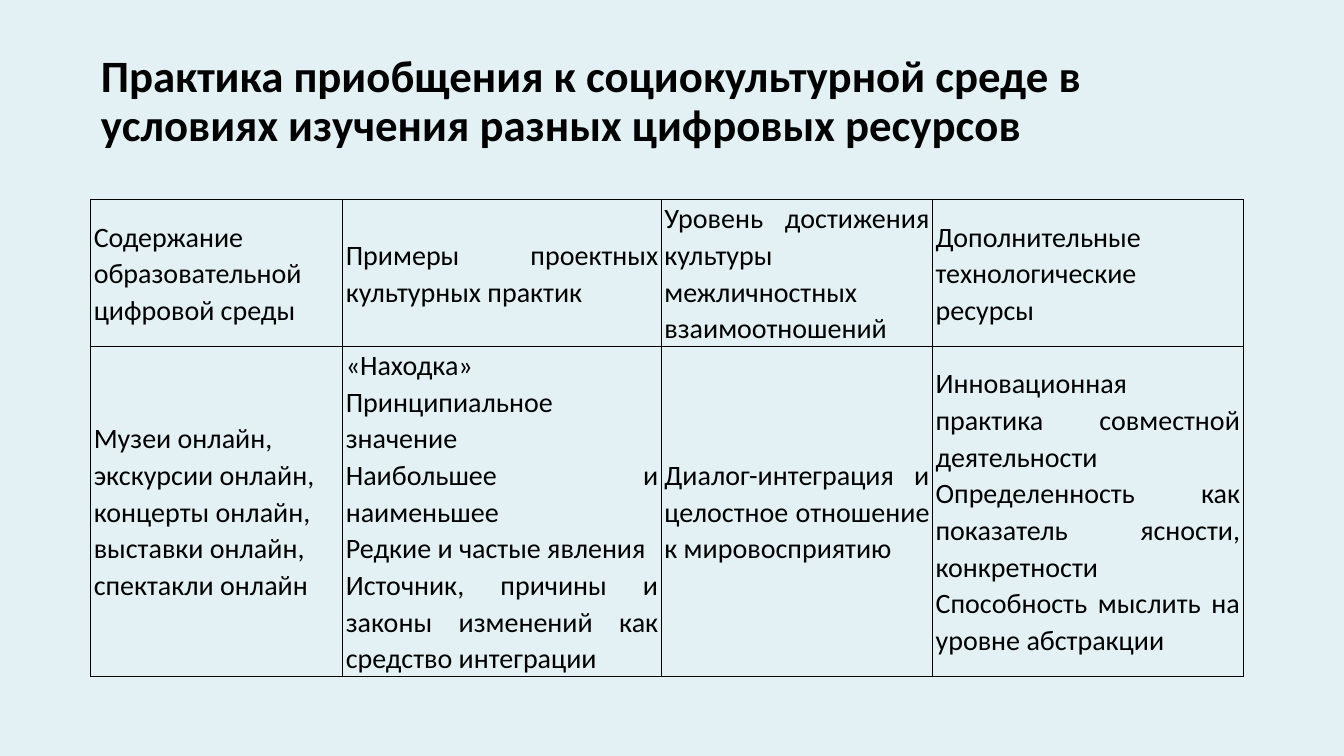
import pptx
import pptx.util
import pptx.dml.color
import pptx.enum.text
import pptx.oxml
import pptx.oxml.ns

Inches = pptx.util.Inches
ALIGN = pptx.enum.text.PP_ALIGN
MIDDLE = pptx.enum.text.MSO_ANCHOR.MIDDLE
BLACK = pptx.dml.color.RGBColor(0x00, 0x00, 0x00)
PALE = pptx.dml.color.RGBColor(0xE4, 0xF1, 0xF4)

WIDE, HIGH = 13.33, 7.5
LEFT = 0.9
COLS = [2.5, 3.16, 2.69, 3.08]
ROWS = [1.45, 3.27]

TITLE = "Практика приобщения к социокультурной среде в условиях изучения разных цифровых ресурсов"
CELLS = [
    [
        ["Содержание образовательной цифровой среды"],
        ["Примеры проектных культурных практик"],
        ["Уровень достижения культуры межличностных взаимоотношений"],
        ["Дополнительные технологические ресурсы"],
    ],
    [
        ["Музеи онлайн,", "экскурсии онлайн,", "концерты онлайн,",
         "выставки онлайн,", "спектакли онлайн"],
        ["«Находка»", "Принципиальное значение", "Наибольшее и наименьшее",
         "Редкие и частые явления",
         "Источник, причины и законы изменений как средство интеграции"],
        ["Диалог-интеграция и целостное отношение к мировосприятию"],
        ["Инновационная практика совместной деятельности",
         "Определенность как показатель ясности, конкретности",
         "Способность мыслить на уровне абстракции"],
    ],
]


def write(frame, lines, size=20, bold=False, align=ALIGN.JUSTIFY, lead=1.07):
    frame.word_wrap = True
    for index, line in enumerate(lines):
        para = frame.paragraphs[0] if index == 0 else frame.add_paragraph()
        para.alignment = align
        para.line_spacing = lead
        run = para.add_run()
        run.text = line
        run.font.name = "Calibri"
        run.font.size = pptx.util.Pt(size)
        run.font.bold = bold
        run.font.color.rgb = BLACK


def frame_cell(cell):
    cell.fill.background()
    props = cell._tc.get_or_add_tcPr()
    for index, side in enumerate("LRTB"):
        line = pptx.oxml.parse_xml(
            f'<a:ln{side} {pptx.oxml.ns.nsdecls("a")} w="12700">'
            f'<a:solidFill><a:srgbClr val="{BLACK}"/></a:solidFill>'
            f'</a:ln{side}>'
        )
        props.insert(index, line)


def add_title(slide, left, top, width, height):
    title = slide.shapes.title
    title.left, title.top = Inches(left), Inches(top)
    title.width, title.height = Inches(width), Inches(height)
    frame = title.text_frame
    frame.auto_size = pptx.enum.text.MSO_AUTO_SIZE.NONE
    frame.vertical_anchor = MIDDLE
    write(frame, [TITLE], size=32, bold=True, align=ALIGN.LEFT, lead=0.9)


def add_grid(slide, left, top, width, height):
    shape = slide.shapes.add_table(
        len(ROWS), len(COLS),
        Inches(left), Inches(top), Inches(width), Inches(height),
    )
    table = shape.table
    table.first_row = False
    table.horz_banding = False
    for column, share in zip(table.columns, COLS):
        column.width = Inches(width * share / sum(COLS))
    for row, share in zip(table.rows, ROWS):
        row.height = Inches(height * share / sum(ROWS))
    for row, texts in zip(table.rows, CELLS):
        for cell, lines in zip(row.cells, texts):
            cell.vertical_anchor = MIDDLE
            cell.margin_left = cell.margin_right = Inches(0.03)
            cell.margin_top = cell.margin_bottom = 0
            frame_cell(cell)
            write(cell.text_frame, lines)


def main():
    deck = pptx.Presentation()
    deck.slide_width, deck.slide_height = Inches(WIDE), Inches(HIGH)
    slide = deck.slides.add_slide(deck.slide_layouts[5])
    slide.background.fill.solid()
    slide.background.fill.fore_color.rgb = PALE
    add_title(slide, LEFT, 0.5, 11.5, 1.03)
    add_grid(slide, LEFT, 1.98, sum(COLS), sum(ROWS))
    deck.save("out.pptx")


if __name__ == "__main__":
    main()
